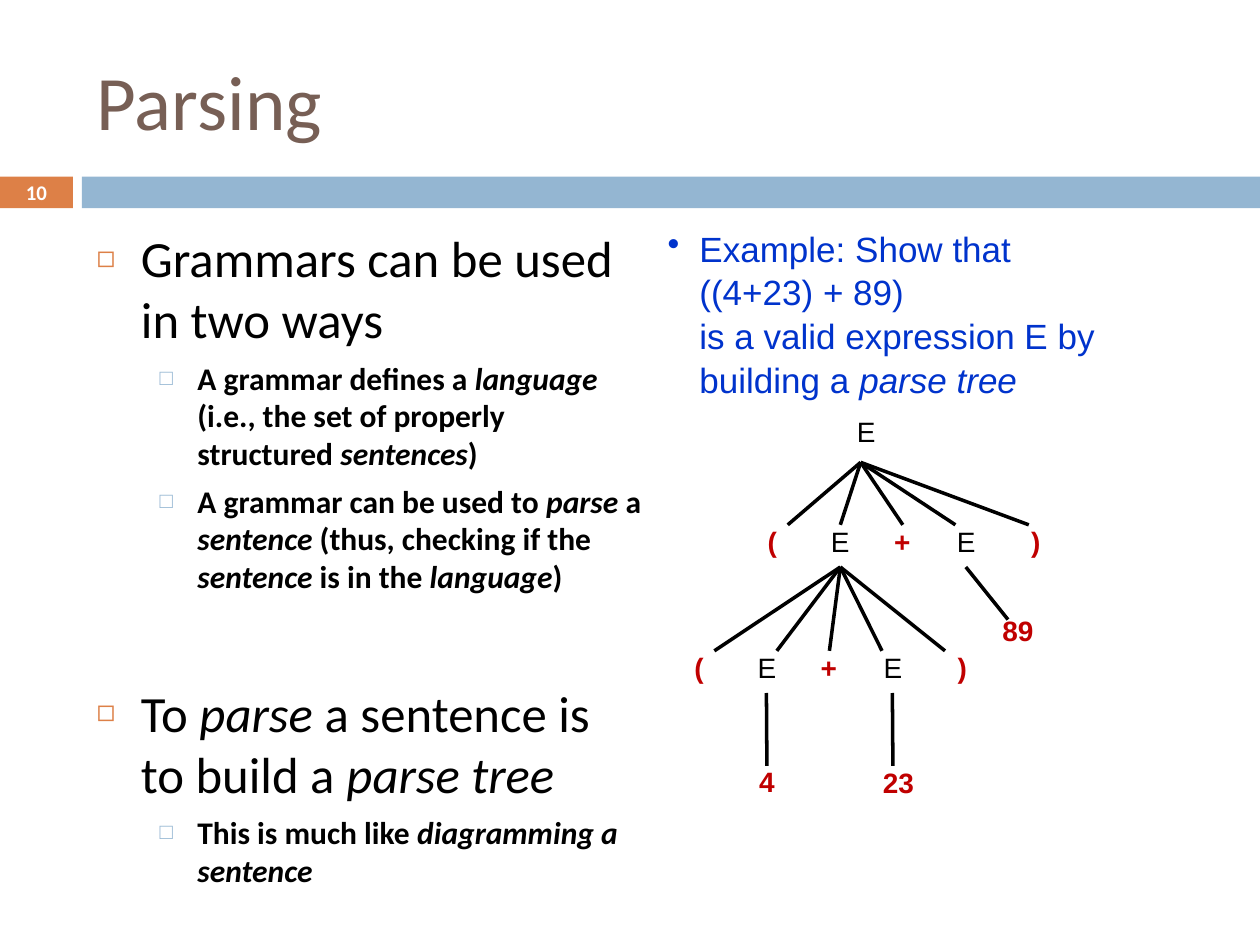
from lxml.etree import SubElement as Sub
from pptx import Presentation
from pptx.dml.color import RGBColor as RGB
from pptx.enum.shapes import MSO_CONNECTOR as LINE, MSO_SHAPE as SHAPE
from pptx.enum.text import MSO_ANCHOR as ANCHOR, MSO_AUTO_SIZE as FIT, PP_ALIGN as ALIGN
from pptx.oxml.ns import qn
from pptx.util import Cm, Pt

BROWN = RGB(0x77, 0x5F, 0x55)
ORANGE = RGB(0xDD, 0x80, 0x47)
SKY = RGB(0x94, 0xB6, 0xD2)
BLUE = RGB(0x00, 0x33, 0xCC)
RED = RGB(0xC0, 0x00, 0x00)
BLACK = RGB(0x00, 0x00, 0x00)
WHITE = RGB(0xFF, 0xFF, 0xFF)

TITLE = "Parsing"
NUMBER = "10"
POINTS = [
    (0, 7, "Grammars can be used in two ways"),
    (1, 5.5, "A grammar defines a *language* (i.e., the set of properly structured *sentences*)"),
    (1, 5.5, "A grammar can be used to *parse* a *sentence* (thus, checking if the *sentence* is in the *language*)"),
    (0, 49.4, "To *parse* a sentence is to build a *parse tree*"),
    (1, 5.5, "This is much like *diagramming a sentence*"),
]
LEVELS = [
    dict(size=29, left=0.89, hang=0.89, bullet=("◻", ORANGE, 60)),
    dict(size=18, bold=True, left=2.03, hang=0.76, bullet=("□", SKY, 70)),
]
EXAMPLE = "Example: Show that\n((4+23) + 89)\nis a valid expression E by building a *parse tree*"

RULE = "(E+E)"
SPREAD = [15.57, 16.94, 18.19, 19.48, 20.88]
ROWS = [(0, 10.57), (-1.48, 13.11)]
NODES = [("E", 17.46, 8.36), ("89", 20.52, 12.37), ("4", 15.46, 15.42), ("23", 18.11, 15.44)]
NODES += [(mark, x + shift, top) for shift, top in ROWS for mark, x in zip(RULE, SPREAD)]
WIDTHS = {"E": 0.81, "(": 0.41, ")": 0.41, "+": 0.56, "4": 0.53}
FANS = [
    (17.35, 9.32, 10.58, [15.88, 16.94, 18.2, 19.26, 20.74]),
    (19.47, 11.43, 12.49, [20.32]),
    (16.94, 11.43, 13.12, [14.4, 15.66, 16.72, 17.78, 19.05]),
    (15.45, 13.97, 15.44, [15.46]),
    (17.99, 13.97, 15.44, [18]),
]


def place(shape, *box):
    shape.left, shape.top, shape.width, shape.height = map(Cm, box)


def frame(shape, pads=(0, 0, 0, 0), anchor=ANCHOR.TOP, wrap=True):
    body = shape.text_frame
    body.auto_size = FIT.NONE
    body.word_wrap = wrap
    body.vertical_anchor = anchor
    body.margin_left, body.margin_top, body.margin_right, body.margin_bottom = map(Cm, pads)
    return body


def write(para, text, size=16, color=BLACK, font="Calibri", bold=False,
          align=ALIGN.LEFT, before=0, lines=1, left=0, hang=0, bullet=None):
    para.alignment = align
    para.space_before = Pt(before)
    para.line_spacing = lines
    props = para._p.get_or_add_pPr()
    props.set("marL", str(Cm(left)))
    props.set("indent", str(-Cm(hang)))
    if bullet:
        sign, tint, scale = bullet
        Sub(Sub(props, qn("a:buClr")), qn("a:srgbClr"), val=str(tint))
        Sub(props, qn("a:buSzPct"), val=str(scale * 1000))
        Sub(props, qn("a:buChar"), char=sign)
    for i, part in enumerate(text.split("*")):
        for j, piece in enumerate(part.split("\n")):
            if j:
                para.add_line_break()
            if piece:
                run = para.add_run()
                run.text = piece
                face = run.font
                face.name, face.size, face.bold = font, Pt(size), bold
                face.italic = i % 2 == 1
                face.color.rgb = color


def bar(slide, color, *box):
    shape = slide.shapes.add_shape(SHAPE.RECTANGLE, *map(Cm, box))
    shape.shadow.inherit = False
    shape.fill.solid()
    shape.fill.fore_color.rgb = color
    shape.line.fill.background()
    return shape


def label(slide, *box, **style):
    return frame(slide.shapes.add_textbox(*map(Cm, box)), **style).paragraphs[0]


def edge(slide, *ends):
    line = slide.shapes.add_connector(LINE.STRAIGHT, *map(Cm, ends))
    line.line.color.rgb = BLACK
    line.line.width = Pt(2)
    Sub(line._element.spPr, qn("a:effectLst"))


def main():
    deck = Presentation()
    deck.slide_width, deck.slide_height = Cm(25.4), Cm(19.05)
    slide = deck.slides.add_slide(deck.slide_layouts[1])
    title, body = slide.placeholders
    pads = (0.25, 0.13, 0.36, 0.13)

    place(title, 1.7, 0.64, 22.66, 2.74)
    write(frame(title, pads, ANCHOR.MIDDLE).paragraphs[0], TITLE, size=44, color=BROWN)

    place(body, 1.7, 4.45, 11.63, 12.5)
    text = frame(body, pads)
    for i, (level, gap, words) in enumerate(POINTS):
        para = text.add_paragraph() if i else text.paragraphs[0]
        para.level = level
        write(para, words, before=gap, **LEVELS[level])

    badge = bar(slide, ORANGE, 0, 3.56, 1.47, 0.64)
    bar(slide, SKY, 1.65, 3.56, 23.75, 0.64)
    write(frame(badge, anchor=ANCHOR.MIDDLE).paragraphs[0], NUMBER,
          size=11.9, color=WHITE, bold=True, align=ALIGN.CENTER)

    write(label(slide, 13.34, 4.55, 10.59, 3.51, pads=(0, 0, 0.1, 0)), EXAMPLE,
          size=20, color=BLUE, font="Arial", before=4.5, lines=1.04,
          left=0.76, hang=0.64, bullet=("•", BLUE, 100))

    for mark, x, top in NODES:
        leaf = mark != "E"
        wide = WIDTHS.get(mark, 0.86)
        para = label(slide, x - wide / 2, top, wide, 0.69 if leaf else 0.89, wrap=False)
        write(para, mark, color=RED if leaf else BLACK, font="Arial",
              bold=leaf, align=ALIGN.CENTER)

    for x, top, low, ends in FANS:
        for end in ends:
            edge(slide, x, top, end, low)

    deck.save("out.pptx")


if __name__ == "__main__":
    main()
